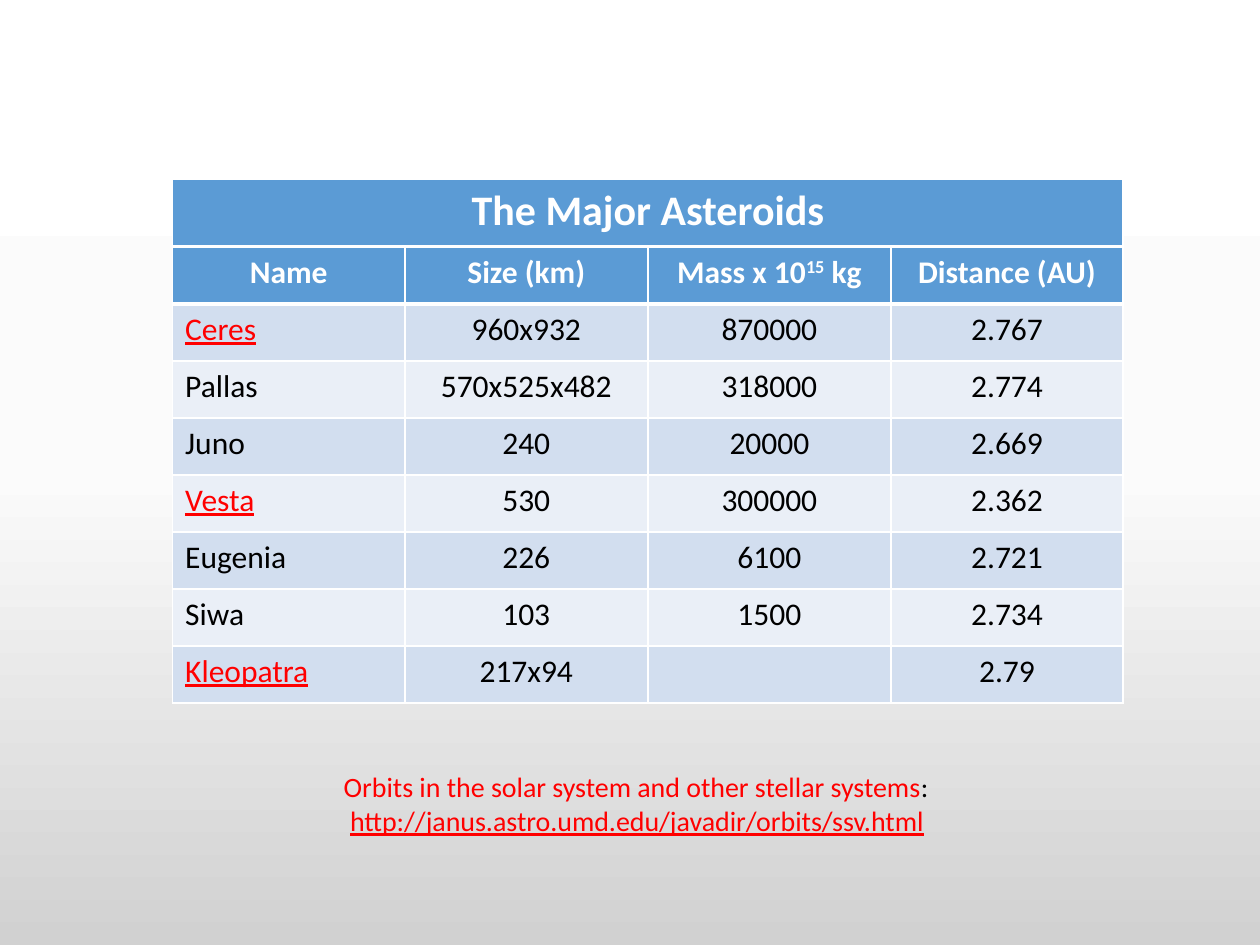
from copy import deepcopy

from lxml.etree import SubElement
from pptx import Presentation
from pptx.dml.color import RGBColor
from pptx.enum.text import MSO_AUTO_SIZE, PP_ALIGN
from pptx.oxml.ns import qn
from pptx.util import Cm, Pt

# Content: a span is its text, optionally with a style name
TITLE = "The Major Asteroids"
HEADINGS = ["Name", "Size (km)", [("Mass x 10",), ("15", "raised"), (" kg",)], "Distance (AU)"]
ASTEROIDS = [
    ("Ceres", "960x932", "870000", "2.767"),
    ("Pallas", "570x525x482", "318000", "2.774"),
    ("Juno", "240", "20000", "2.669"),
    ("Vesta", "530", "300000", "2.362"),
    ("Eugenia", "226", "6100", "2.721"),
    ("Siwa", "103", "1500", "2.734"),
    ("Kleopatra", "217x94", "", "2.79"),
]
HIGHLIGHTED = {"Ceres", "Vesta", "Kleopatra"}
SOURCE_LINES = [
    [("Orbits in the solar system and other stellar systems", "red"), (":",)],
    [(" ",), ("http://janus.astro.umd.edu/javadir/orbits/ssv.html", "marked")],
]

# Formats
COLORS = {"white": "FFFFFF", "black": "000000", "red": "FF0000", "header": "5B9BD5",
          "odd": "D2DEEF", "even": "EAEFF7"}
BACKGROUND = [(0, "FFFFFF"), (0.5, "FBFBFB"), (1, "D1D1D1")]
TITLE_FORMAT = {"size": Pt(24), "bold": True, "color": "white"}
HEADING_FORMAT = {"size": Pt(18), "bold": True, "color": "white"}
BODY_FORMAT = {"size": Pt(18), "bold": False, "color": "black"}
SOURCE_FORMAT = {"size": Pt(16), "color": "black"}
STYLES = {"raised": {"baseline": 30000}, "red": {"color": "red"},
          "marked": {"color": "red", "underline": True}}

# Layout
LEFT, TOP = Cm(3.48), Cm(3.61)
TITLE_HEIGHT, ROW_HEIGHT = Cm(1.37), Cm(1.15)
COLUMN_WIDTHS = [Cm(4.68), Cm(4.9), Cm(4.9), Cm(4.68)]
THIN, THICK = Pt(1), Pt(3)


def write(para, spans, base):
    for text, *styles in spans:
        span = para.add_run()
        span.text = text
        values = {"name": "Calibri", **base}
        for style in styles:
            values.update(STYLES[style])
        for name, value in values.items():
            if name == "color":
                span.font.color.rgb = RGBColor.from_string(COLORS[value])
            elif name == "baseline":
                span.font._element.set("baseline", str(value))
            else:
                setattr(span.font, name, value)


def draw_borders(cell, top, bottom):
    properties = cell._tc.get_or_add_tcPr()
    for side, width in (("L", THIN), ("R", THIN), ("T", top), ("B", bottom)):
        line = SubElement(properties, qn(f"a:ln{side}"), w=str(width))
        fill = SubElement(line, qn("a:solidFill"))
        SubElement(fill, qn("a:srgbClr"), val=COLORS["white"])


def fill_cell(cell, content, base, color, centered=True, top=THIN, bottom=THIN):
    draw_borders(cell, top, bottom)
    cell.fill.solid()
    cell.fill.fore_color.rgb = RGBColor.from_string(COLORS[color])
    para = cell.text_frame.paragraphs[0]
    if centered:
        para.alignment = PP_ALIGN.CENTER
    if content:
        write(para, [(content,)] if isinstance(content, str) else content, base)


def add_grid(page, top, widths, row_count, row_height):
    frame = page.shapes.add_table(row_count, len(widths), LEFT, top,
                                  sum(widths), row_height * row_count)
    for column, width in zip(frame.table.columns, widths):
        column.width = width
    for row in frame.table.rows:
        row.height = row_height
    return frame.table


deck = Presentation()
deck.slide_width, deck.slide_height = Cm(25.4), Cm(19.05)
page = deck.slides.add_slide(deck.slide_layouts[6])

# Background gradient, with a third stop in the middle
backdrop = page.background.fill
backdrop.gradient()
backdrop.gradient_angle = 270
first_stop = next(page._element.iter(qn("a:gs")))
first_stop.addnext(deepcopy(first_stop))
for stop, (position, color) in zip(backdrop.gradient_stops, BACKGROUND):
    stop.position = position
    stop.color.rgb = RGBColor.from_string(color)

# Title band
band = add_grid(page, TOP, [sum(COLUMN_WIDTHS)], 1, TITLE_HEIGHT)
fill_cell(band.cell(0, 0), TITLE, TITLE_FORMAT, "header", bottom=THICK)

# Asteroid table
grid = add_grid(page, TOP + TITLE_HEIGHT, COLUMN_WIDTHS, len(ASTEROIDS) + 1, ROW_HEIGHT)
for column, heading in enumerate(HEADINGS):
    fill_cell(grid.cell(0, column), heading, HEADING_FORMAT, "header", bottom=THICK)
for row, asteroid in enumerate(ASTEROIDS, start=1):
    for column, value in enumerate(asteroid):
        content = [(value, "marked")] if value in HIGHLIGHTED else value
        fill_cell(grid.cell(row, column), content, BODY_FORMAT,
                  "odd" if row % 2 else "even", centered=column > 0,
                  top=THICK if row == 1 else THIN)

# Source note
box = page.shapes.add_textbox(Cm(6.68), Cm(15.39), Cm(12.57), Cm(1.63))
note = box.text_frame
note.word_wrap = False
note.auto_size = MSO_AUTO_SIZE.SHAPE_TO_FIT_TEXT
for index, spans in enumerate(SOURCE_LINES):
    para = note.add_paragraph() if index else note.paragraphs[0]
    write(para, spans, SOURCE_FORMAT)

deck.save("out.pptx")
